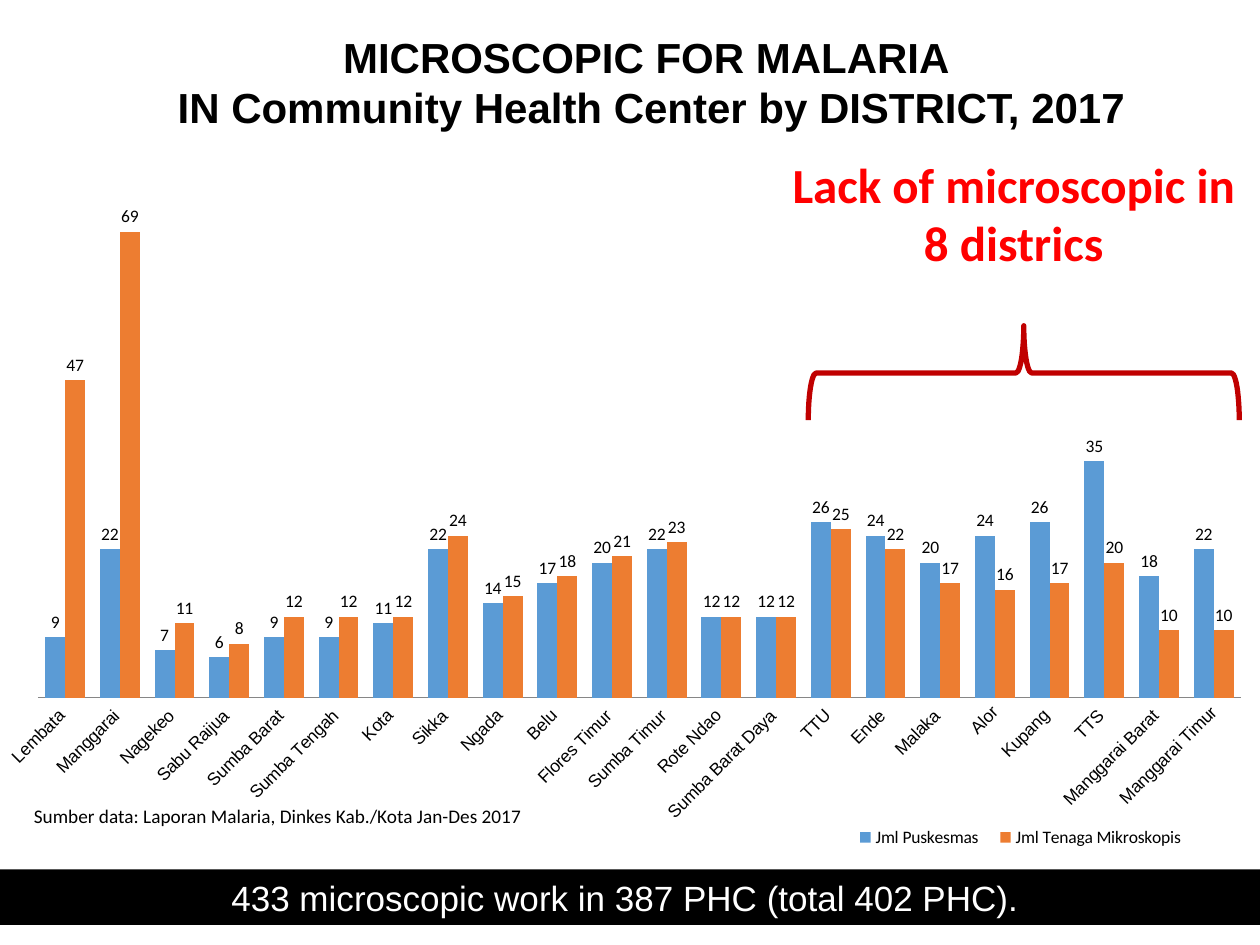
import pptx
import pptx.chart.data
import pptx.dml.color
import pptx.enum.chart
import pptx.enum.shapes
import pptx.enum.text
import pptx.oxml
import pptx.util
from pptx.util import Inches, Pt

RGBColor = pptx.dml.color.RGBColor
BLACK = RGBColor(0, 0, 0)
WHITE = RGBColor(255, 255, 255)
RED = RGBColor(255, 0, 0)
DARK_RED = RGBColor(0xC0, 0, 0)
GRAY = RGBColor(0x86, 0x86, 0x86)
BLUE = RGBColor(0x5B, 0x9B, 0xD5)
ORANGE = RGBColor(0xED, 0x7D, 0x31)

CENTER = pptx.enum.text.PP_ALIGN.CENTER
LEFT = pptx.enum.text.PP_ALIGN.LEFT
TOP = pptx.enum.text.MSO_ANCHOR.TOP
MIDDLE = pptx.enum.text.MSO_ANCHOR.MIDDLE
SHAPES = pptx.enum.shapes.MSO_SHAPE
COUNT_FORMAT = '_(* #,##0_);_(* \\(#,##0\\);_(* "-"??_);_('

DISTRICTS = [
    ("Lembata ", 9, 47), ("Manggarai ", 22, 69), ("Nagekeo ", 7, 11),
    ("Sabu Raijua ", 6, 8), ("Sumba Barat ", 9, 12), ("Sumba Tengah ", 9, 12),
    ("Kota ", 11, 12), ("Sikka ", 22, 24), ("Ngada ", 14, 15),
    ("Belu ", 17, 18), ("Flores Timur ", 20, 21), ("Sumba Timur ", 22, 23),
    ("Rote Ndao ", 12, 12), ("Sumba Barat Daya ", 12, 12), ("TTU ", 26, 25),
    ("Ende ", 24, 22), ("Malaka ", 20, 17), ("Alor", 24, 16),
    ("Kupang ", 26, 17), ("TTS ", 35, 20), ("Manggarai Barat ", 18, 10),
    ("Manggarai Timur", 22, 10),
]


def write(shape, lines, size, font, color, bold=False, align=CENTER, anchor=MIDDLE):
    frame = shape.text_frame
    frame.word_wrap = True
    frame.vertical_anchor = anchor
    frame.text = "\n".join(lines)
    for paragraph in frame.paragraphs:
        paragraph.alignment = align
        paragraph.font.size = Pt(size)
        paragraph.font.name = font
        paragraph.font.bold = bold
        paragraph.font.color.rgb = color


def set_layout(element, x, y, w, h, inner=False):
    target = '<c:layoutTarget val="inner"/>' if inner else ""
    layout = pptx.oxml.parse_xml(
        '<c:layout xmlns:c="http://schemas.openxmlformats.org/drawingml/2006/chart">'
        f'<c:manualLayout>{target}<c:xMode val="edge"/><c:yMode val="edge"/>'
        f'<c:x val="{x}"/><c:y val="{y}"/><c:w val="{w}"/><c:h val="{h}"/>'
        "</c:manualLayout></c:layout>"
    )
    for old in element.xpath("./c:layout"):
        element.remove(old)
    positions = element.xpath("./c:legendPos")
    element.insert(len(positions), layout)


presentation = pptx.Presentation()
presentation.slide_width = Inches(10)
presentation.slide_height = Inches(7.5)
slide = presentation.slides.add_slide(presentation.slide_layouts[6])

names, health_centers, microscopists = zip(*DISTRICTS)
counts = pptx.chart.data.CategoryChartData(number_format=COUNT_FORMAT)
counts.categories = names
counts.add_series("Jml Puskesmas", health_centers)
counts.add_series("Jml Tenaga Mikroskopis", microscopists)
chart = slide.shapes.add_chart(
    pptx.enum.chart.XL_CHART_TYPE.COLUMN_CLUSTERED,
    Inches(0), Inches(1.25), Inches(10), Inches(5.65), counts,
).chart
chart.has_title = False
chart.font.size = Pt(10)
chart.font.name = "Calibri"
chart.font.color.rgb = BLACK

district_axis = chart.category_axis
district_axis.major_tick_mark = pptx.enum.chart.XL_TICK_MARK.NONE
district_axis.format.line.color.rgb = GRAY
district_axis.tick_labels.font.name = "Arial"
district_axis.tick_labels.font.size = Pt(10)
district_axis.tick_labels.font.color.rgb = BLACK
district_axis._element.txPr.bodyPr.set("rot", "-2700000")

count_axis = chart.value_axis
count_axis.visible = False
count_axis.has_major_gridlines = False
count_axis.minimum_scale = 0
count_axis.maximum_scale = 80

columns = chart.plots[0]
columns.gap_width = 75
columns.overlap = 0
columns.vary_by_categories = False
for series, color in zip(columns.series, (BLUE, ORANGE)):
    series.format.fill.solid()
    series.format.fill.fore_color.rgb = color
    labels = series.data_labels
    labels.show_value = True
    labels.number_format = COUNT_FORMAT
    labels.number_format_is_linked = False
    labels.position = pptx.enum.chart.XL_LABEL_POSITION.OUTSIDE_END

chart.has_legend = True
chart.legend.position = pptx.enum.chart.XL_LEGEND_POSITION.BOTTOM
chart.legend.include_in_layout = False
set_layout(chart.legend._element, 0.67, 0.93, 0.28, 0.05)
set_layout(chart._chartSpace.chart.plotArea, 0.03, 0, 0.955, 0.759, inner=True)

title = slide.shapes.add_textbox(Inches(0.42), Inches(0.17), Inches(9.5), Inches(1))
write(title, ["MICROSCOPIC FOR MALARIA ", "IN Community Health Center by DISTRICT, 2017"],
      24, "Arial", BLACK, bold=True, anchor=TOP)
title.text_frame.margin_top = Inches(0.08)

data_source = slide.shapes.add_textbox(Inches(0.17), Inches(6.33), Inches(5.63), Inches(0.29))
write(data_source, ["Sumber data: Laporan Malaria, Dinkes Kab./Kota Jan-Des 2017"],
      11, "Calibri", BLACK, align=LEFT, anchor=TOP)

summary = slide.shapes.add_shape(
    SHAPES.RECTANGLE, Inches(0), Inches(6.9), Inches(10), Inches(0.44))
write(summary, ["433 microscopic work in 387 PHC (total 402 PHC). "], 20, "Arial", WHITE)

shortage = slide.shapes.add_shape(
    SHAPES.RECTANGLE, Inches(6.17), Inches(1.17), Inches(3.75), Inches(1.04))
write(shortage, ["Lack of microscopic in 8 districs"], 28, "Calibri", RED, bold=True)

for panel, color in ((summary, BLACK), (shortage, WHITE)):
    panel.shadow.inherit = False
    panel.fill.solid()
    panel.fill.fore_color.rgb = color
    panel.line.fill.background()

shortage_brace = slide.shapes.add_shape(
    SHAPES.LEFT_BRACE, Inches(7.75), Inches(1.25), Inches(0.75), Inches(3.42))
shortage_brace.rotation = 90
shortage_brace.shadow.inherit = False
shortage_brace.fill.background()
shortage_brace.line.color.rgb = DARK_RED
shortage_brace.line.width = Pt(3)

presentation.save("out.pptx")
